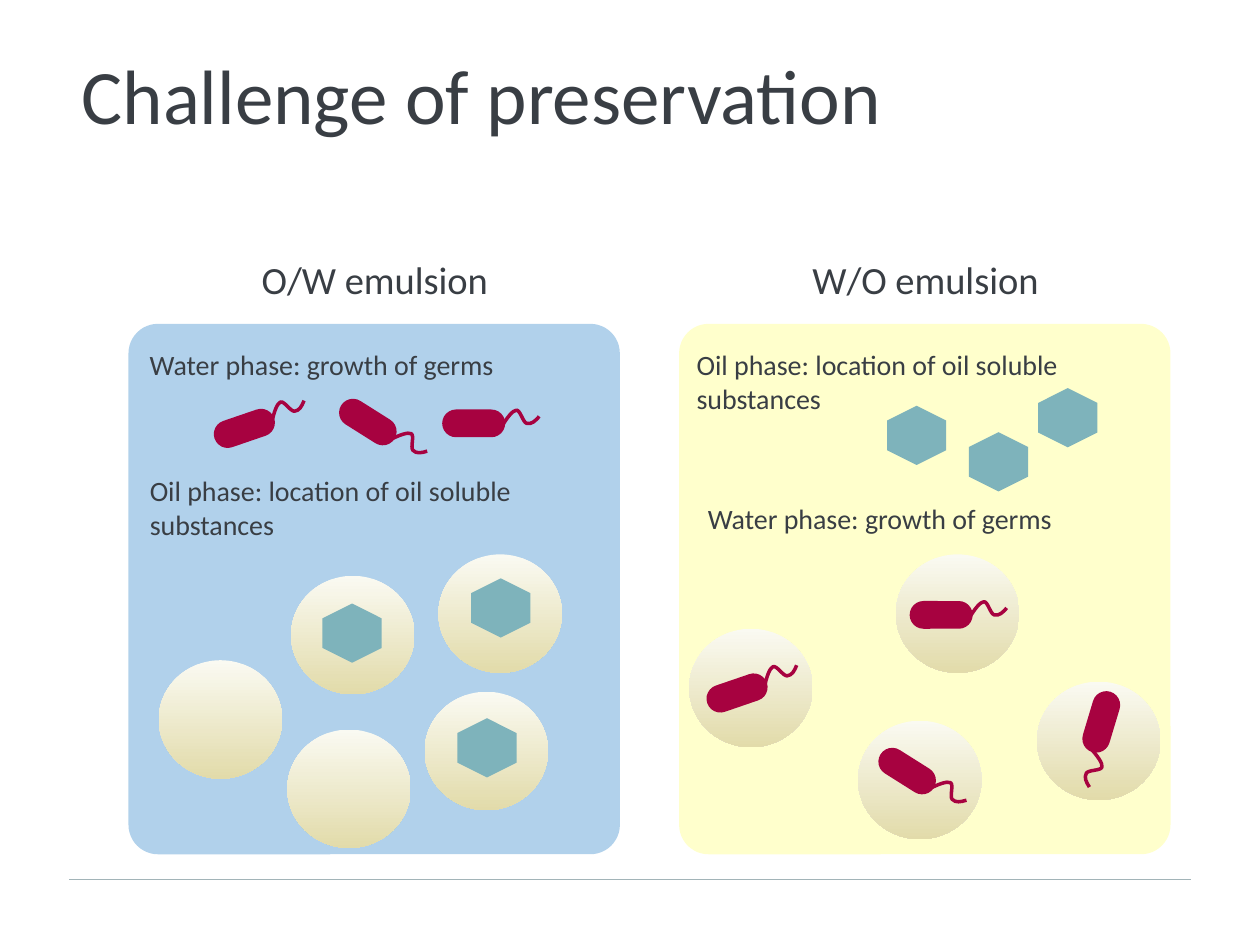
"""Build a slide comparing preservation in O/W and W/O emulsions."""
from dataclasses import dataclass
from math import cos, radians, sin

from lxml import etree
from pptx import Presentation
from pptx.dml.color import RGBColor
from pptx.enum.shapes import MSO_CONNECTOR, MSO_SHAPE
from pptx.enum.text import MSO_ANCHOR, MSO_AUTO_SIZE, PP_ALIGN
from pptx.oxml.ns import qn
from pptx.shapes.autoshape import Shape
from pptx.slide import Slide
from pptx.util import Emu, Inches, Pt

ROUNDED = MSO_SHAPE.ROUNDED_RECTANGLE
OVAL = MSO_SHAPE.OVAL
HEXAGON = MSO_SHAPE.HEXAGON
STRAIGHT = MSO_CONNECTOR.STRAIGHT
LEFT, CENTER = PP_ALIGN.LEFT, PP_ALIGN.CENTER
TOP = MSO_ANCHOR.TOP
GROW = MSO_AUTO_SIZE.SHAPE_TO_FIT_TEXT

WIDTH, HEIGHT = Inches(10), Inches(7.5)
COLUMNS = 100
CELL = WIDTH / COLUMNS
FONT = "Calibri"
COLORS = {
    "text": "393E44",
    "rule": "A2B4B8",
    "water": "B1D1EB",
    "oil": "FFFFCC",
    "droplet_top": "FAFAF2",
    "droplet_bottom": "E2DBAA",
    "germ": "A70240",
    "substance": "7EB3BB",
}
PANEL_TOP, PANEL_SIZE = 25.7, (39, 42.1)
DROPLET_SIZE = (9.8, 9.4)
SUBSTANCE_SIZE = (4.7, 4.7)
GERM_SIZE = (5, 2.2)
TAIL_OFFSET = (3.7, -0.4)
TAIL_START = (-1.5, 0.7)
TAIL_CONTROLS = (
    (-1.1, 0), (-0.6, -0.65), (-0.3, -0.65),
    (0, -0.65), (0.2, 0.3), (0.5, 0.4),
    (0.9, 0.5), (1.2, 0.2), (1.5, -0.15),
)

Point = tuple[float, float]


@dataclass(frozen=True)
class Label:
    text: str
    left: float
    top: float
    width: float
    height: float
    size: int = 16
    alignment: PP_ALIGN = LEFT


@dataclass(frozen=True)
class Germ:
    x: float
    y: float
    angle: float = 0


@dataclass(frozen=True)
class Panel:
    left: float
    color: str
    droplets: tuple[Point, ...]
    substances: tuple[Point, ...]
    germs: tuple[Germ, ...]
    labels: tuple[Label, ...]


WATER_TEXT = "Water phase: growth of germs"
OIL_TEXT = "Oil phase: location of oil soluble substances"
PANELS = (
    Panel(
        left=10.2,
        color="water",
        droplets=((12.6, 52.4), (22.8, 57.9), (33.7, 54.9), (23.1, 45.7), (34.8, 44)),
        substances=((37.4, 45.9), (36.3, 57), (25.6, 47.9)),
        germs=(Germ(37.6, 33.6), Germ(29.2, 33.5, 32.2), Germ(19.4, 34, 341.1)),
        labels=(
            Label("O/W emulsion", 15.3, 19.8, 28.9, 4.7, 22, CENTER),
            Label(WATER_TEXT, 10.9, 27.1, 33.4, 3.7),
            Label(OIL_TEXT, 10.9, 37.1, 34.8, 6.4),
        ),
    ),
    Panel(
        left=53.9,
        color="oil",
        droplets=((71.1, 44), (82.3, 54.1), (68.1, 57.2), (54.7, 49.9)),
        substances=((70.4, 32.2), (76.9, 34.3), (82.4, 30.8)),
        germs=(
            Germ(74.7, 48.8),
            Germ(58.5, 55, 341.1),
            Germ(72, 61.2, 32.2),
            Germ(87.4, 57.3, 106.7),
        ),
        labels=(
            Label("W/O emulsion", 59, 19.8, 28.9, 4.7, 22, CENTER),
            Label(WATER_TEXT, 55.2, 39.3, 33.4, 3.7),
            Label(OIL_TEXT, 54.3, 27.1, 34.8, 6.4),
        ),
    ),
)


def cells(count: float) -> Emu:
    return Emu(round(count * CELL))


def color(name: str) -> RGBColor:
    return RGBColor.from_string(COLORS[name])


def add_solid(shapes, kind: MSO_SHAPE, corner: Point, size: Point, fill: str) -> Shape:
    shape = shapes.add_shape(kind, *map(cells, (*corner, *size)))
    shape.shadow.inherit = False
    shape.fill.solid()
    shape.fill.fore_color.rgb = color(fill)
    shape.line.fill.background()
    return shape


def add_droplet(slide: Slide, corner: Point) -> None:
    fill = add_solid(slide.shapes, OVAL, corner, DROPLET_SIZE, "droplet_top").fill
    fill.gradient()
    fill.gradient_angle = 270
    for position, (stop, name) in enumerate(
        zip(fill.gradient_stops, ("droplet_top", "droplet_bottom"))
    ):
        stop.position = position
        stop.color.rgb = color(name)


def curve_segments(shape: Shape) -> None:
    """Turn every three line segments of a freeform into one cubic curve."""
    lines = list(shape.element.iter(qn("a:lnTo")))
    for first in range(0, len(lines), 3):
        curve = etree.Element(qn("a:cubicBezTo"))
        lines[first].addprevious(curve)
        for line in lines[first:first + 3]:
            curve.append(line[0])
            line.getparent().remove(line)


def add_germ(slide: Slide, germ: Germ) -> None:
    shapes = slide.shapes.add_group_shape().shapes
    width, height = GERM_SIZE
    corner = (germ.x - width / 2, germ.y - height / 2)
    body = add_solid(shapes, ROUNDED, corner, GERM_SIZE, "germ")
    body.adjustments[0] = 0.5
    body.rotation = germ.angle
    cosine, sine = cos(radians(germ.angle)), sin(radians(germ.angle))
    across, down = TAIL_OFFSET
    tail_x = germ.x + across * cosine - down * sine
    tail_y = germ.y + across * sine + down * cosine
    start, *controls = [
        (cells(tail_x + x), cells(tail_y + y)) for x, y in (TAIL_START, *TAIL_CONTROLS)
    ]
    builder = shapes.build_freeform(*start)
    builder.add_line_segments(controls, close=False)
    tail = builder.convert_to_shape()
    curve_segments(tail)
    tail.rotation = germ.angle
    tail.shadow.inherit = False
    tail.fill.background()
    tail.line.color.rgb = color("germ")
    tail.line.width = Pt(2)


def add_label(slide: Slide, label: Label) -> None:
    box = slide.shapes.add_textbox(
        *map(cells, (label.left, label.top, label.width, label.height))
    )
    frame = box.text_frame
    frame.word_wrap = True
    frame.auto_size = GROW
    frame.vertical_anchor = TOP
    frame.text = label.text
    paragraph = frame.paragraphs[0]
    paragraph.alignment = label.alignment
    font = paragraph.runs[0].font
    font.name, font.size = FONT, Pt(label.size)
    font.color.rgb = color("text")


def add_rule(slide: Slide) -> None:
    rule = slide.shapes.add_connector(STRAIGHT, *map(cells, (5.5, 69.8, 94.5, 69.8)))
    rule.line.color.rgb = color("rule")
    rule.line.width = Pt(0.75)
    etree.SubElement(rule.element.spPr, qn("a:effectLst"))


def add_panel(slide: Slide, panel: Panel) -> None:
    corner = (panel.left, PANEL_TOP)
    add_solid(slide.shapes, ROUNDED, corner, PANEL_SIZE, panel.color).adjustments[0] = 0.06
    for droplet in panel.droplets:
        add_droplet(slide, droplet)
    for label in panel.labels:
        add_label(slide, label)
    for germ in panel.germs:
        add_germ(slide, germ)
    for substance in panel.substances:
        add_solid(slide.shapes, HEXAGON, substance, SUBSTANCE_SIZE, "substance").rotation = 270


presentation = Presentation()
presentation.slide_width, presentation.slide_height = WIDTH, HEIGHT
main_slide = presentation.slides.add_slide(presentation.slide_layouts[6])
add_rule(main_slide)
add_label(main_slide, Label("Challenge of preservation", 5.5, 3.3, 89, 11.4, 44))
for emulsion in PANELS:
    add_panel(main_slide, emulsion)
presentation.save("out.pptx")
